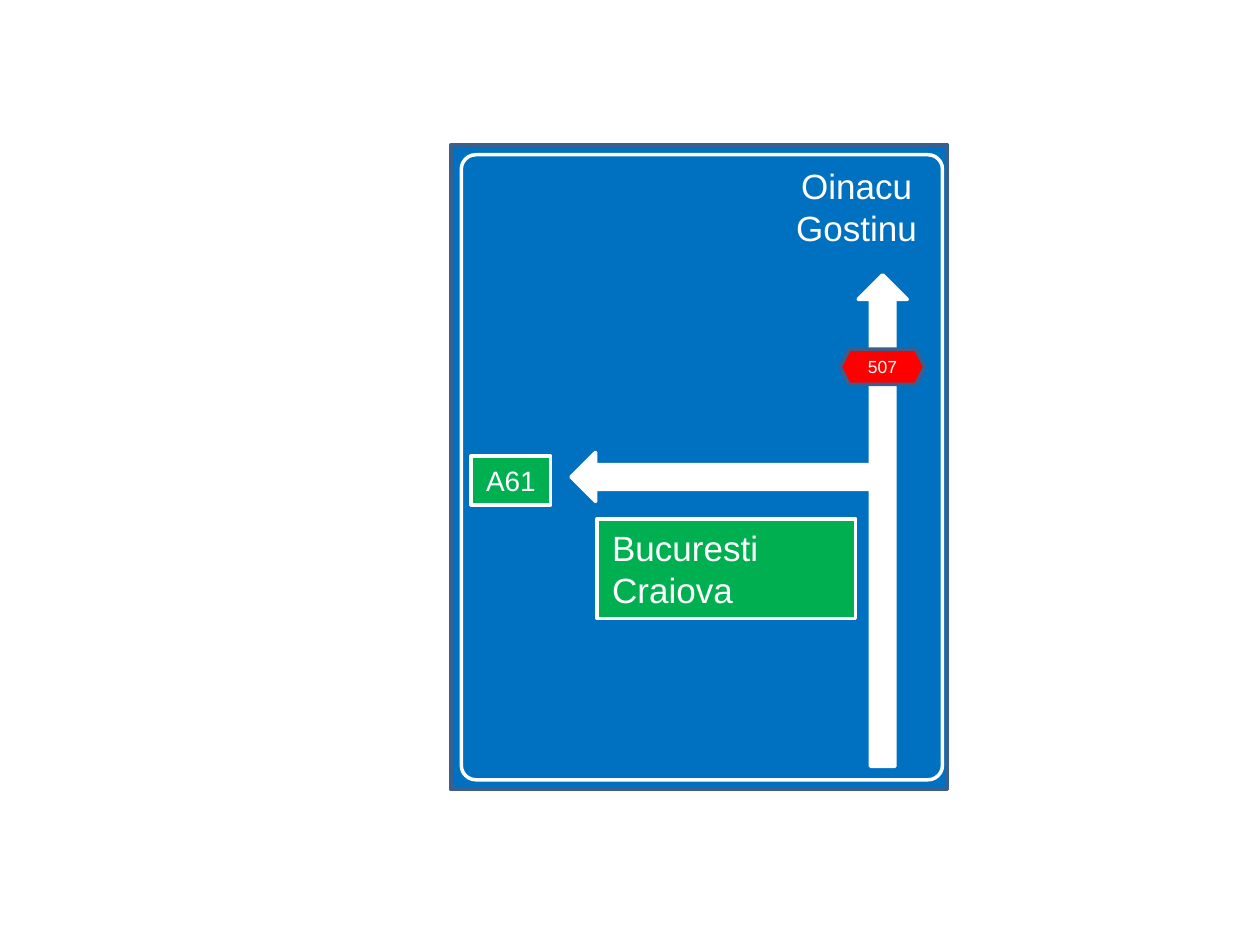
"""Build a road direction sign slide."""
from pptx import Presentation
from pptx.dml.color import RGBColor
from pptx.enum.shapes import MSO_SHAPE as Preset
from pptx.enum.text import MSO_ANCHOR as Anchor, PP_ALIGN as Align
from pptx.util import Cm, Pt

BLUE, GREEN, RED = "0070C0", "00B050", "FF0000"
WHITE, EDGE = "FFFFFF", "3A5F8C"


def rgb(code):
    """Turn a hex string into a colour."""
    return RGBColor.from_string(code)


def add_panel(slide, preset, box, fill=None, edge=None):
    """Add a flat shape, its box given in centimetres."""
    panel = slide.shapes.add_shape(preset, *map(Cm, box))
    panel.shadow.inherit = False
    if fill:
        panel.fill.solid()
        panel.fill.fore_color.rgb = rgb(fill)
    else:
        panel.fill.background()
    if edge:
        panel.line.color.rgb = rgb(edge)
        panel.line.width = Pt(2)
    else:
        panel.line.fill.background()
    return panel


def add_lettering(panel, lines, size, align=Align.CENTER, margins=(0, 0, 0, 0)):
    """Write white lines on a panel; margins are left, top, right, bottom."""
    frame = panel.text_frame
    frame.word_wrap = True
    frame.vertical_anchor = Anchor.MIDDLE
    (frame.margin_left, frame.margin_top,
     frame.margin_right, frame.margin_bottom) = map(Cm, margins)
    for index, line in enumerate(lines):
        paragraph = frame.add_paragraph() if index else frame.paragraphs[0]
        paragraph.alignment = align
        run = paragraph.add_run()
        run.text = line
        run.font.name = "Arial"
        run.font.size = Pt(size)
        run.font.color.rgb = rgb(WHITE)


def add_arrows(slide):
    """Add the road ahead and the branch to the left."""
    add_panel(slide, Preset.UP_ARROW, (17.3, 5.54, 0.99, 9.91), WHITE, WHITE)
    branch = add_panel(slide, Preset.RIGHT_ARROW, (11.51, 9.12, 6.27, 0.99), WHITE, WHITE)
    branch.rotation = 180


def main():
    """Build and save the sign."""
    deck = Presentation()
    deck.slide_width, deck.slide_height = Cm(25.4), Cm(19.05)
    slide = deck.slides.add_slide(deck.slide_layouts[6])

    add_panel(slide, Preset.RECTANGLE, (9.09, 2.92, 10.01, 13), BLUE, EDGE)
    add_arrows(slide)

    cities = add_panel(slide, Preset.RECTANGLE, (12.04, 10.46, 5.21, 2.01), GREEN, WHITE)
    add_lettering(cities, ["Bucuresti", "Craiova"], 20, Align.LEFT, (0.3, 0.13, 0.25, 0.13))

    motorway = add_panel(slide, Preset.RECTANGLE, (9.5, 9.19, 1.6, 0.99), GREEN, WHITE)
    add_lettering(motorway, ["A61"], 16)

    villages = add_panel(slide, Preset.RECTANGLE, (15.49, 3.25, 3.51, 2.01), BLUE)
    add_lettering(villages, ["Oinacu", "Gostinu"], 20, margins=(0.3, 0.1, 0.25, 0.3))

    county_road = add_panel(slide, Preset.HEXAGON, (16.94, 7.04, 1.7, 0.71), RED, EDGE)
    add_lettering(county_road, ["507"], 10)

    border = add_panel(slide, Preset.ROUNDED_RECTANGLE, (9.3, 3.12, 9.7, 12.6), edge=WHITE)
    border.adjustments[0] = 0.03

    deck.save("out.pptx")


if __name__ == "__main__":
    main()
